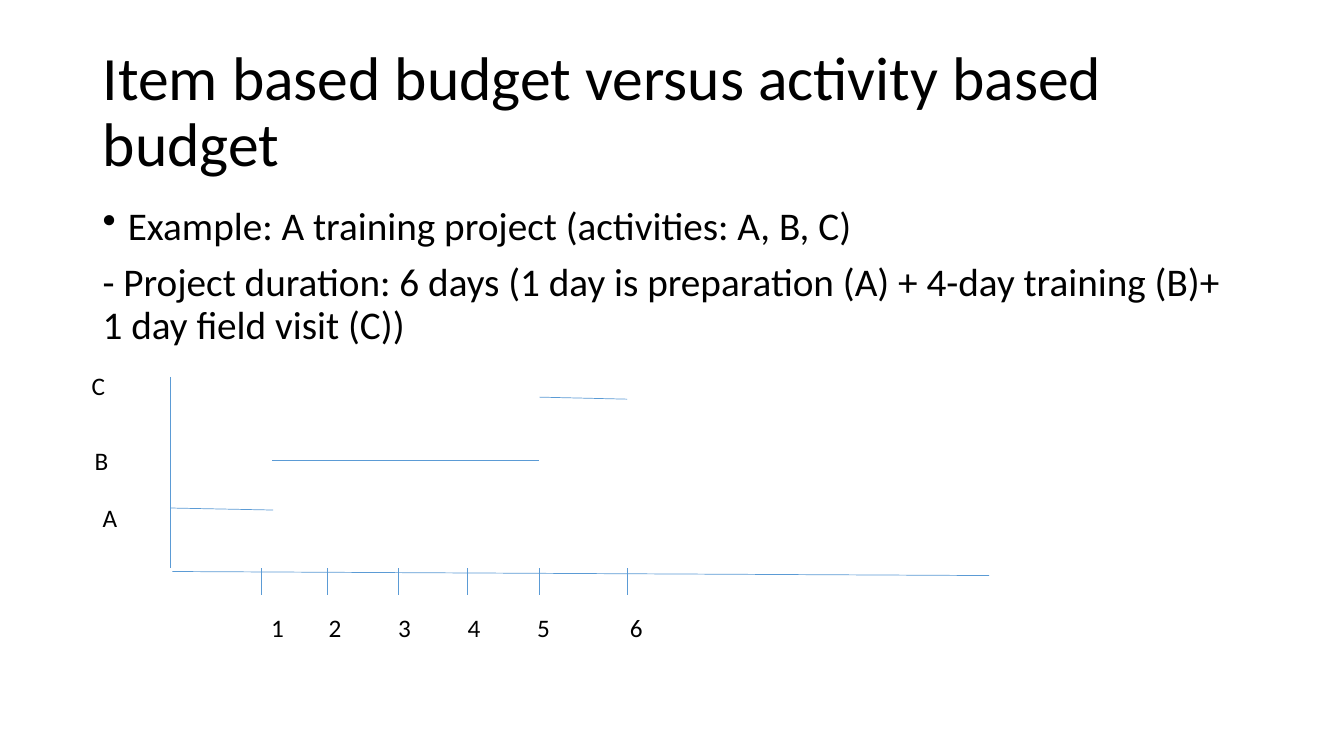
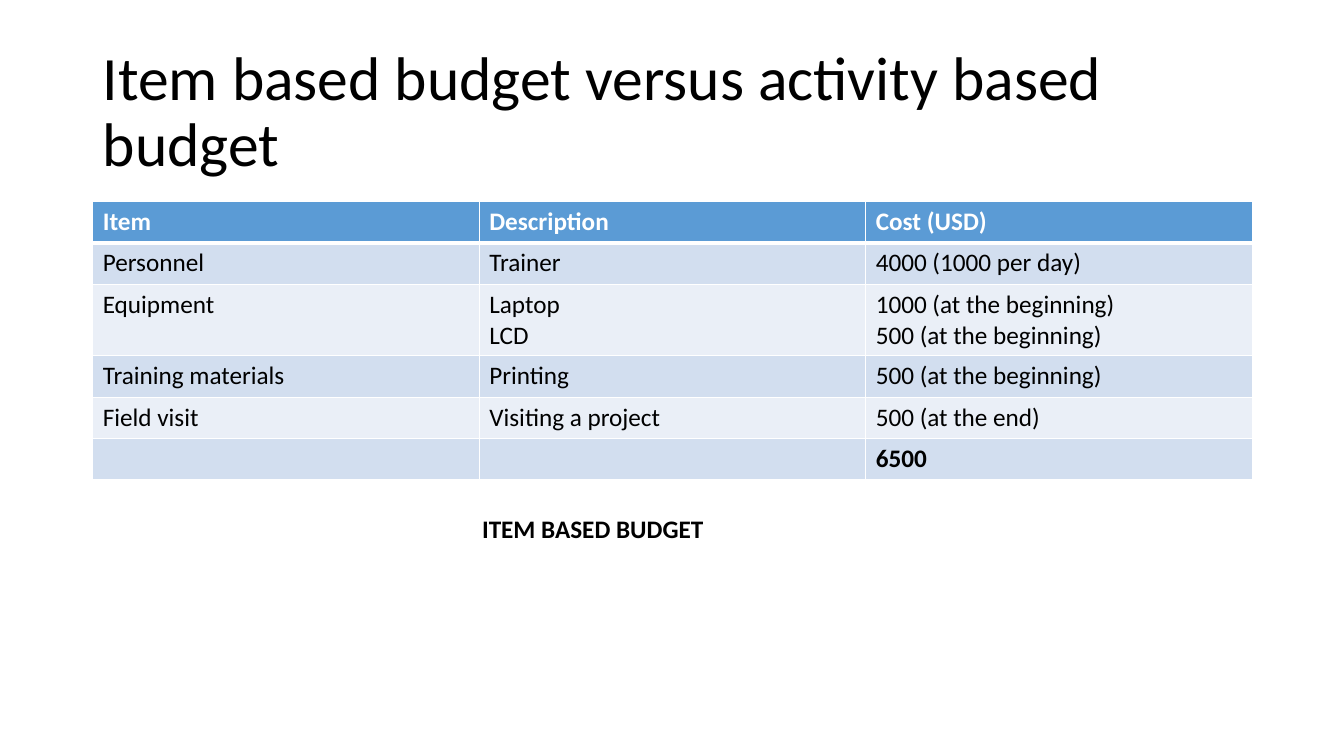
from lxml.etree import SubElement
from pptx import Presentation
from pptx.dml.color import RGBColor
from pptx.enum.shapes import MSO_CONNECTOR
from pptx.enum.text import MSO_ANCHOR, PP_ALIGN
from pptx.oxml.ns import qn
from pptx.util import Inches, Pt


def color(value):
    return RGBColor.from_string(value)


class BudgetDeck:
    FONT = "Calibri"
    BLACK, WHITE, BLUE = "000000", "FFFFFF", "5B9BD5"
    BANDS = ("D2DEEF", "EAEFF7")
    LEFT, WIDTH = 0.92, 11.5
    ROW_HEIGHT, EXTRA_LINE = 0.41, 0.3

    def __init__(self):
        self.deck = Presentation()
        self.deck.slide_width = Inches(13.33)
        self.deck.slide_height = Inches(7.5)
        self.page = None

    def style(self, paragraph, size=18, ink=BLACK, bold=False):
        font = paragraph.font
        font.name, font.size, font.bold = self.FONT, Pt(size), bold
        font.color.rgb = color(ink)

    def add_page(self, title):
        self.page = self.deck.slides.add_slide(self.deck.slide_layouts[5])
        box = self.page.shapes.title
        box.left, box.top = Inches(self.LEFT), Inches(0.4)
        box.width, box.height = Inches(self.WIDTH), Inches(1.45)
        box.text_frame.text = title
        box.text_frame.vertical_anchor = MSO_ANCHOR.MIDDLE
        paragraph = box.text_frame.paragraphs[0]
        paragraph.alignment = PP_ALIGN.LEFT
        paragraph.line_spacing = 0.9
        self.style(paragraph, 44)

    def text(self, content, left, top, width, height=0.4, size=18, bold=False,
             align=PP_ALIGN.LEFT):
        box = self.page.shapes.add_textbox(
            Inches(left), Inches(top), Inches(width), Inches(height))
        frame = box.text_frame
        frame.word_wrap = True
        frame.text = content
        for paragraph in frame.paragraphs:
            paragraph.alignment = align
            self.style(paragraph, size, bold=bold)
        return frame.paragraphs

    def body(self, lines):
        paragraphs = self.text("\n".join(lines), self.LEFT, 2, self.WIDTH, 4.76, 28)
        for paragraph in paragraphs:
            paragraph.line_spacing = 0.9
            paragraph.space_before = Pt(10)
        self.add_bullet(paragraphs[0])

    def add_bullet(self, paragraph):
        properties = paragraph._p.get_or_add_pPr()
        properties.set("marL", str(Inches(0.25)))
        properties.set("indent", str(-Inches(0.25)))
        bullet = properties.makeelement(qn("a:buChar"), {"char": "•"})
        properties.find(qn("a:defRPr")).addprevious(bullet)

    def tabbed_text(self, words, stops, left, top, width):
        paragraph = self.text("\t".join(words), left, top, width)[0]
        properties = paragraph._p.get_or_add_pPr()
        tabs = properties.makeelement(qn("a:tabLst"), {})
        for stop in stops:
            SubElement(tabs, qn("a:tab"), pos=str(Inches(stop)), algn="l")
        properties.find(qn("a:defRPr")).addprevious(tabs)

    def line(self, x1, y1, x2, y2):
        connector = self.page.shapes.add_connector(
            MSO_CONNECTOR.STRAIGHT, Inches(x1), Inches(y1), Inches(x2), Inches(y2))
        connector.line.color.rgb = color(self.BLUE)
        connector.line.width = Pt(0.5)
        SubElement(connector._element.spPr, qn("a:effectLst"))

    def table(self, rows, top):
        heights = [self.ROW_HEIGHT + self.EXTRA_LINE * max(cell.count("\n") for cell in row)
                   for row in rows]
        columns = len(rows[0])
        table = self.page.shapes.add_table(
            len(rows), columns, Inches(self.LEFT), Inches(top),
            Inches(self.WIDTH), Inches(sum(heights))).table
        for column in table.columns:
            column.width = Inches(self.WIDTH / columns)
        for number, (row, height) in enumerate(zip(rows, heights)):
            table.rows[number].height = Inches(height)
            header = number == 0
            fill = self.BLUE if header else self.BANDS[(number - 1) % 2]
            bold = header or number == len(rows) - 1
            for index, content in enumerate(row):
                cell = table.cell(number, index)
                cell.text = content
                self.borders(cell, top=3 if number == 1 else 1, bottom=3 if header else 1)
                cell.fill.solid()
                cell.fill.fore_color.rgb = color(fill)
                for paragraph in cell.text_frame.paragraphs:
                    self.style(paragraph, ink=self.WHITE if header else self.BLACK, bold=bold)

    def borders(self, cell, top, bottom):
        properties = cell._tc.get_or_add_tcPr()
        for side, width in (("L", 1), ("R", 1), ("T", top), ("B", bottom)):
            border = SubElement(properties, qn(f"a:ln{side}"), w=str(Pt(width)))
            fill = SubElement(border, qn("a:solidFill"))
            SubElement(fill, qn("a:srgbClr"), val=self.WHITE)


TITLE = "Item based budget versus activity based budget"


def add_schedule(budget):
    budget.add_page(TITLE)
    budget.body([
        "Example: A training project (activities: A, B, C)",
        "- Project duration: 6 days (1 day is preparation (A) + 4-day training (B)+ "
        "1 day field visit (C))",
    ])
    # Axes and day ticks
    budget.line(1.69, 3.74, 1.69, 5.64)
    budget.line(1.71, 5.67, 9.81, 5.71)
    for day in (2.59, 3.25, 3.95, 4.64, 5.35, 6.22):
        budget.line(day, 5.64, day, 5.9)
    budget.tabbed_text("123456", (0.57, 1.26, 1.95, 2.64, 3.56), 2.59, 6.03, 4.23)
    # Activities: name, label position, bar
    activities = (
        ("A", 0.92, 4.93, (1.69, 5.04, 2.71, 5.06)),
        ("B", 0.84, 4.37, (2.7, 4.57, 5.35, 4.57)),
        ("C", 0.81, 3.62, (5.35, 3.94, 6.22, 3.96)),
    )
    for name, left, top, bar in activities:
        budget.text(name, left, top, 0.7)
        budget.line(*bar)


def add_item_budget(budget):
    budget.add_page(TITLE)
    budget.table([
        ("Item", "Description", "Cost (USD)"),
        ("Personnel", "Trainer", "4000 (1000 per day)"),
        ("Equipment", "Laptop\nLCD", "1000 (at the beginning)\n500 (at the beginning)"),
        ("Training materials", "Printing", "500 (at the beginning)"),
        ("Field visit", "Visiting a project", "500 (at the end)"),
        ("", "", "6500"),
    ], top=2)
    budget.text("ITEM BASED BUDGET", 2.4, 5.04, 6.96, bold=True, align=PP_ALIGN.CENTER)


def main():
    budget = BudgetDeck()
    add_schedule(budget)
    add_item_budget(budget)
    budget.deck.save("out.pptx")


if __name__ == "__main__":
    main()
